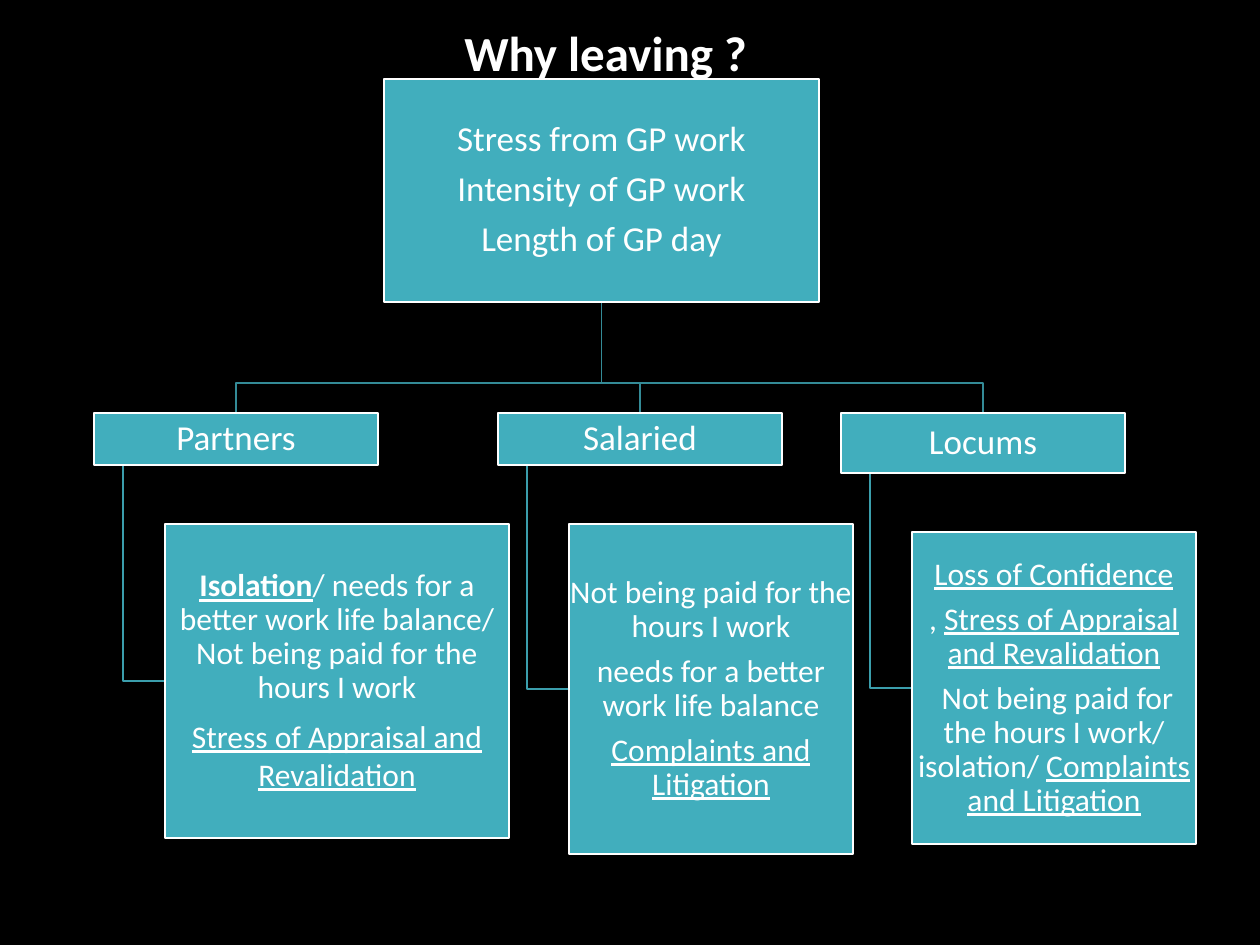
from pptx import Presentation
from pptx.dml.color import RGBColor
from pptx.enum.shapes import MSO_SHAPE as Preset
from pptx.enum.text import MSO_ANCHOR as Anchor, PP_ALIGN as Align
from pptx.util import Pt

PX = 914400 / 126
BLACK, WHITE, TEAL = "000000", "FFFFFF", "41AEBD"
TRUNK, BRANCH = "348B97", "3B9EAC"


def px(length):
    return round(length * PX)


def rgb(code):
    return RGBColor.from_string(code)


class Chart:
    """Holds the style and the slide on which the organisation chart is drawn."""

    font = "Calibri"
    inset = 1

    def __init__(self, slide):
        self.slide = slide
        slide.background.fill.solid()
        slide.background.fill.fore_color.rgb = rgb(BLACK)

    def fill_text(self, frame, paragraphs, size, spacing=0.9):
        """Fill a frame; a paragraph is a list of (text, marks), marks being any of b and u."""
        frame.word_wrap = True
        for index, parts in enumerate(paragraphs):
            paragraph = frame.add_paragraph() if index else frame.paragraphs[0]
            paragraph.alignment = Align.CENTER
            paragraph.line_spacing = spacing
            paragraph.space_after = Pt(round(size * 0.35, 1))
            for text, marks in parts:
                run = paragraph.add_run()
                run.text = text
                run.font.name, run.font.size = self.font, Pt(size)
                run.font.color.rgb = rgb(WHITE)
                run.font.bold, run.font.underline = "b" in marks, "u" in marks

    def title(self, left, top, width, height, text):
        box = self.slide.shapes.add_textbox(px(left), px(top), px(width), px(height))
        self.fill_text(box.text_frame, [[(text, "b")]], 28, 1.0)
        box.text_frame.paragraphs[0].space_after = Pt(0)

    def box(self, left, top, width, height, paragraphs, size):
        box = self.slide.shapes.add_shape(
            Preset.RECTANGLE, px(left), px(top), px(width), px(height))
        box.shadow.inherit = False
        box.fill.solid()
        box.fill.fore_color.rgb = rgb(TEAL)
        box.line.color.rgb = rgb(WHITE)
        box.line.width = Pt(1)
        frame = box.text_frame
        frame.vertical_anchor = Anchor.MIDDLE
        frame.margin_left = frame.margin_right = px(self.inset)
        frame.margin_top = frame.margin_bottom = px(self.inset)
        self.fill_text(frame, paragraphs, size)
        return frame

    def elbow(self, points, color):
        start, *rest = [(px(x), px(y)) for x, y in points]
        builder = self.slide.shapes.build_freeform(*start)
        builder.add_line_segments(rest, close=False)
        line = builder.convert_to_shape()
        line.shadow.inherit = False
        line.fill.background()
        line.line.color.rgb = rgb(color)
        line.line.width = Pt(1)


APPRAISAL = ("Stress of Appraisal and Revalidation", "u")
COMPLAINTS = ("Complaints and Litigation", "u")
REASONS = ["Stress from GP work", "Intensity of GP work", "Length of GP day"]

# group, left, label height, detail width, detail height, detail paragraphs
GROUPS = [
    ("Partners", 94, 52, 344, 314, [
        [("Isolation", "bu"),
         ("/ needs for a better work life balance/ Not being paid for the hours I work", "")],
        [APPRAISAL]]),
    ("Salaried", 498, 52, 284, 330, [
        [("Not being paid for the hours I work", "")],
        [("needs for a better work life balance", "")],
        [COMPLAINTS]]),
    ("Locums", 841, 60, 284, 312, [
        [("Loss of Confidence", "u")],
        [(", ", ""), APPRAISAL],
        [(" Not being paid for the hours I work/ isolation/ ", ""), COMPLAINTS]]),
]

ROOT_LEFT, ROOT_TOP, ROOT_WIDTH, ROOT_HEIGHT = 384, 79, 435, 223
ROOT_MIDDLE, ROOT_BOTTOM = ROOT_LEFT + ROOT_WIDTH / 2, ROOT_TOP + ROOT_HEIGHT
BUS_TOP, LABEL_TOP, LABEL_WIDTH = 383, 413, 284
STEM_INDENT, DETAIL_INDENT, DETAIL_GAP = 29, 71, 59


def main():
    deck = Presentation()
    deck.slide_width, deck.slide_height = px(1260), px(945)
    chart = Chart(deck.slides.add_slide(deck.slide_layouts[6]))

    for _, left, label_height, _, detail_height, _ in GROUPS:
        label_middle = left + LABEL_WIDTH / 2
        label_bottom = LABEL_TOP + label_height
        stem = left + STEM_INDENT
        detail_middle = label_bottom + DETAIL_GAP + detail_height / 2
        chart.elbow([(ROOT_MIDDLE, ROOT_BOTTOM), (ROOT_MIDDLE, BUS_TOP),
                     (label_middle, BUS_TOP), (label_middle, LABEL_TOP)], TRUNK)
        chart.elbow([(stem, label_bottom), (stem, detail_middle),
                     (left + DETAIL_INDENT, detail_middle)], BRANCH)

    chart.box(ROOT_LEFT, ROOT_TOP, ROOT_WIDTH, ROOT_HEIGHT,
              [[(reason, "")] for reason in REASONS], 20)
    details = {}
    for group, left, label_height, width, height, paragraphs in GROUPS:
        chart.box(left, LABEL_TOP, LABEL_WIDTH, label_height, [[(group, "")]], 20)
        details[group] = chart.box(
            left + DETAIL_INDENT, LABEL_TOP + label_height + DETAIL_GAP,
            width, height, paragraphs, 18)

    partners_stress = details["Partners"].paragraphs[-1]
    partners_stress.line_spacing, partners_stress.space_after = 1.0, Pt(0)

    chart.title(392, 16, 427, 72, "Why leaving ?")
    deck.save("out.pptx")


if __name__ == "__main__":
    main()
